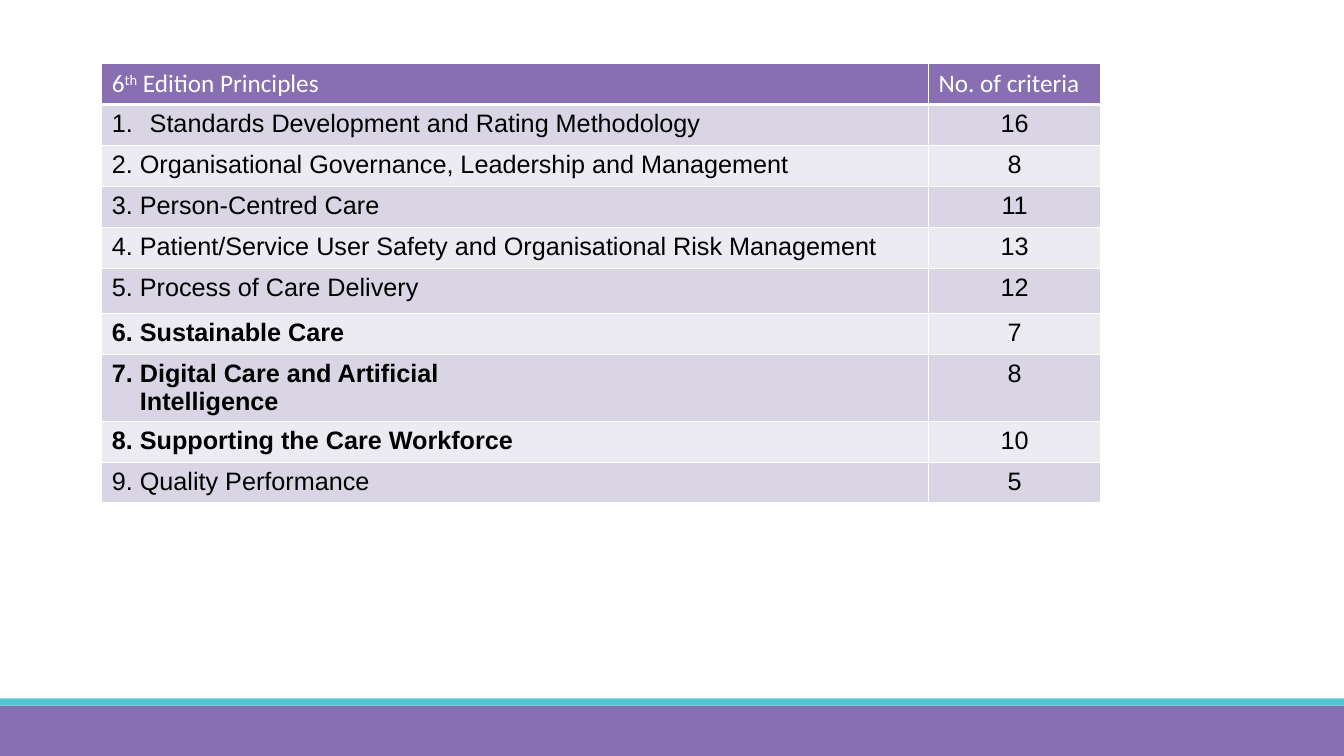
from pptx import Presentation
from pptx.dml.color import RGBColor
from pptx.enum import shapes, text
from pptx.oxml.ns import qn
from pptx.util import Pt
from lxml import etree

PURPLE = RGBColor(0x87, 0x6F, 0xB2)
TEAL = RGBColor(0x56, 0xC5, 0xD0)
BAND_DARK = RGBColor(0xD9, 0xD5, 0xE4)
BAND_LIGHT = RGBColor(0xED, 0xEB, 0xF2)
WHITE = RGBColor(0xFF, 0xFF, 0xFF)
BLACK = RGBColor(0, 0, 0)

WIDTH, HEIGHT = 960, 540
ROW_HEIGHT = 29.25
HEADER = ("6", "th", " Edition Principles")
# Lines of the principle, number of criteria, bold
PRINCIPLES = [
    (["Standards Development and Rating Methodology"], 16, False),
    (["2. Organisational Governance, Leadership and Management"], 8, False),
    (["3. Person-Centred Care"], 11, False),
    (["4. Patient/Service User Safety and Organisational Risk Management"], 13, False),
    (["5. Process of Care Delivery"], 12, False),
    (["6. Sustainable Care"], 7, True),
    (["7. Digital Care and Artificial", "Intelligence"], 8, True),
    (["8. Supporting the Care Workforce"], 10, True),
    (["9. Quality Performance"], 5, False),
]


class SlideBuilder:
    def __init__(self, prs, size=18):
        self.s = prs.slides.add_slide(prs.slide_layouts[6])
        self.size = size

    def bar(self, top, height, color):
        sp = self.s.shapes.add_shape(shapes.MSO_SHAPE.RECTANGLE,
                                     0, Pt(top), Pt(WIDTH), Pt(height))
        sp.shadow.inherit = False
        sp.fill.solid()
        sp.fill.fore_color.rgb = color
        sp.line.fill.background()

    def table(self, left, top, widths, heights):
        tbl = self.s.shapes.add_table(len(heights), len(widths), Pt(left), Pt(top),
                                      Pt(sum(widths)), Pt(sum(heights))).table
        for col, width in zip(tbl.columns, widths):
            col.width = Pt(width)
        for row, height in zip(tbl.rows, heights):
            row.height = Pt(height)
        return tbl

    def cell(self, cell, fill, bottom=1):
        tcPr = cell._tc.get_or_add_tcPr()
        for side, width in (("L", 1), ("R", 1), ("T", 1), ("B", bottom)):
            ln = etree.SubElement(tcPr, qn(f"a:ln{side}"), w=str(Pt(width)))
            solid = etree.SubElement(ln, qn("a:solidFill"))
            etree.SubElement(solid, qn("a:srgbClr"), val=str(WHITE))
        cell.fill.solid()
        cell.fill.fore_color.rgb = fill
        return cell.text_frame.paragraphs[0]

    def run(self, p, words, font="Arial", color=BLACK, bold=False, raised=False):
        r = p.add_run()
        r.text = words
        r.font.name = font
        r.font.size = Pt(self.size)
        r.font.bold = bold
        r.font.color.rgb = color
        if raised:
            r.font._element.set("baseline", "30000")

    def indent(self, p, left, first=0):
        pPr = p._p.get_or_add_pPr()
        pPr.set("marL", str(Pt(left)))
        pPr.set("indent", str(Pt(first)))
        return pPr

    def number(self, p, left):
        pPr = self.indent(p, left, -left)
        etree.SubElement(pPr, qn("a:buFont"), typeface="+mj-lt")
        etree.SubElement(pPr, qn("a:buAutoNum"), type="arabicPeriod")


def main():
    prs = Presentation()
    prs.slide_width, prs.slide_height = Pt(WIDTH), Pt(HEIGHT)
    slide = SlideBuilder(prs)

    # Footer bars
    slide.bar(504, 36, PURPLE)
    slide.bar(498.75, 5.25, TEAL)

    # Table grid: the fifth row is a little taller, the seventh holds two lines
    heights = [28.25] + [ROW_HEIGHT] * len(PRINCIPLES)
    heights[5], heights[7], heights[9] = 32.25, 48, 28.5
    tbl = slide.table(72.75, 45.5, [590.5, 123], heights)

    # Header row
    p = slide.cell(tbl.cell(0, 0), PURPLE, bottom=3)
    for words in HEADER:
        slide.run(p, words, "Calibri", WHITE, raised=words == "th")
    p = slide.cell(tbl.cell(0, 1), PURPLE, bottom=3)
    slide.run(p, "No. of criteria", "Calibri", WHITE)

    # Principles
    for i, (lines, criteria, bold) in enumerate(PRINCIPLES, 1):
        band = BAND_DARK if i % 2 else BAND_LIGHT
        p = slide.cell(tbl.cell(i, 0), band)
        if i == 1:
            slide.number(p, 27)
        slide.run(p, lines[0], bold=bold)
        for line in lines[1:]:
            p = tbl.cell(i, 0).text_frame.add_paragraph()
            slide.indent(p, 20)
            slide.run(p, line, bold=bold)
        p = slide.cell(tbl.cell(i, 1), band)
        p.alignment = text.PP_ALIGN.CENTER
        slide.run(p, str(criteria))

    prs.save("out.pptx")


if __name__ == "__main__":
    main()
